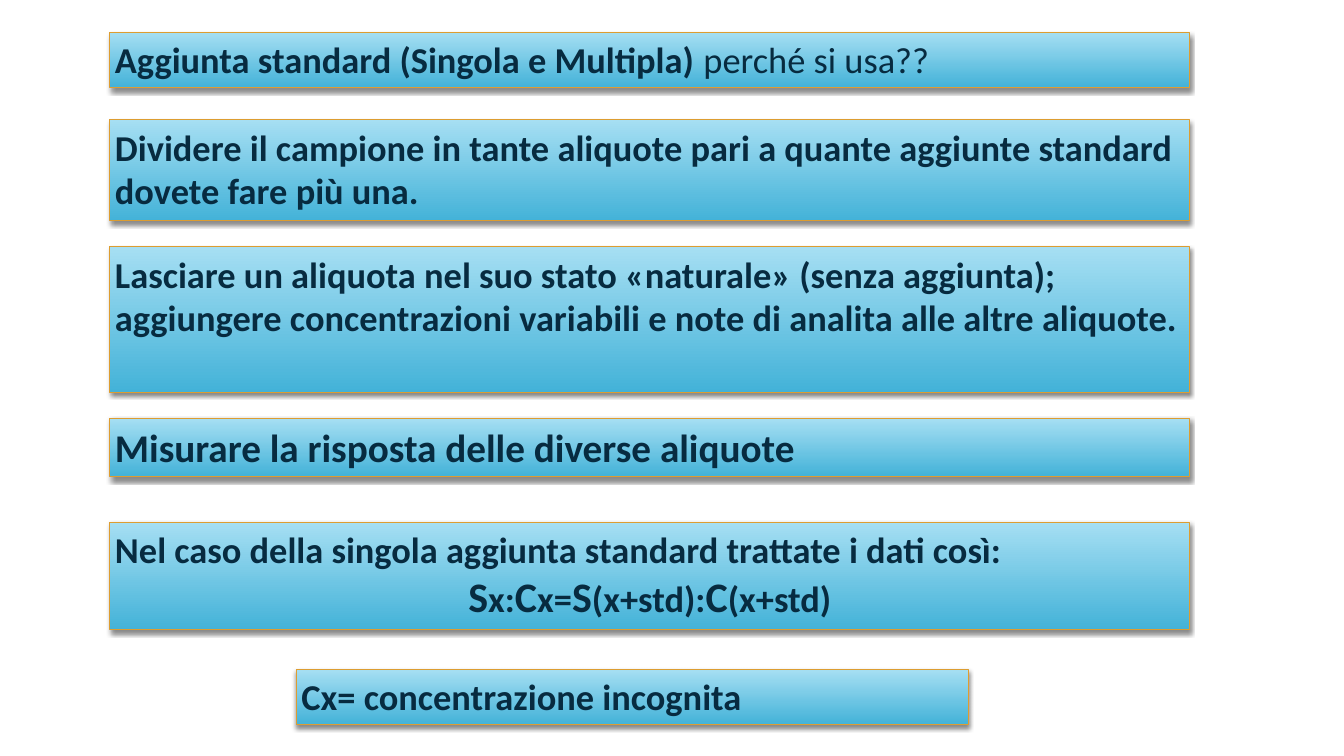
"""Build the slide on the standard addition method."""
from dataclasses import dataclass

from lxml import etree
from pptx import Presentation
from pptx import util as u
from pptx.dml.color import RGBColor
from pptx.enum import shapes, text
from pptx.oxml import ns


@dataclass(frozen=True)
class Theme:
    font: str = "Calibri"
    ink: str = "072B40"
    border: str = "DD9D31"
    gradient: tuple[str, str] = ("A6DFF3", "43B2D8")
    shadow: str = "000000"
    body: int = 26
    step: int = 28
    symbol: int = 30


THEME = Theme()


@dataclass(frozen=True)
class Run:
    words: str
    size: int = THEME.body
    bold: bool = True


@dataclass(frozen=True)
class Line:
    runs: tuple[Run, ...]
    alignment: text.PP_ALIGN = text.PP_ALIGN.LEFT


@dataclass(frozen=True)
class Box:
    top: float
    height: float
    lines: tuple[Line, ...]
    left: float = 1.09
    width: float = 10.71


FORMULA = Line(
    tuple(
        Run(words, size)
        for symbol, suffix in (("S", "x:"), ("C", "x="), ("S", "(x+std):"), ("C", "(x+std)"))
        for words, size in ((symbol, THEME.symbol), (suffix, THEME.body))
    ),
    text.PP_ALIGN.CENTER,
)

BOXES = (
    Box(0.32, 0.55, (Line((
        Run("Aggiunta standard (Singola e Multipla) "),
        Run("perché si usa??", bold=False),
    )),)),
    Box(1.19, 1, (Line((Run(
        "Dividere il campione in tante aliquote pari a quante aggiunte standard "
        "dovete fare più una."
    ),)),)),
    Box(2.45, 1.44, (Line((Run(
        "Lasciare un aliquota nel suo stato «naturale» (senza aggiunta); "
        "aggiungere concentrazioni variabili e note di analita alle altre aliquote."
    ),)),)),
    Box(4.15, 0.58, (Line((
        Run("Misurare la risposta delle diverse aliquote", THEME.step),
    )),)),
    Box(5.18, 1.07, (
        Line((Run("Nel caso della singola aggiunta standard trattate i dati così:"),)),
        FORMULA,
    )),
    Box(6.64, 0.55, (Line((Run("Cx= concentrazione incognita"),)),), left=2.94, width=6.67),
)


def apply(target: object, formats: dict[str, object]) -> None:
    """Set every format value on the target."""
    for name, value in formats.items():
        setattr(target, name, value)


def add_shadow(shape) -> None:
    """Give the shape a soft shadow straight below it."""
    shape.shadow.inherit = False
    effects = shape.element.spPr.find(ns.qn("a:effectLst"))
    outer = etree.SubElement(
        effects, ns.qn("a:outerShdw"), blurRad=str(u.Pt(3)), dist=str(u.Pt(2)),
        dir="5400000", algn="ctr", rotWithShape="0",
    )
    color = etree.SubElement(outer, ns.qn("a:srgbClr"), val=THEME.shadow)
    etree.SubElement(color, ns.qn("a:alpha"), val="45000")


def style_shape(shape) -> None:
    """Apply the gradient, border and shadow shared by all boxes."""
    shape.fill.gradient()
    shape.fill.gradient_angle = 270
    for stop, color in zip(shape.fill.gradient_stops, THEME.gradient):
        stop.color.rgb = RGBColor.from_string(color)
    shape.line.color.rgb = RGBColor.from_string(THEME.border)
    shape.line.width = u.Pt(0.75)
    add_shadow(shape)


def add_line(paragraph, line: Line) -> None:
    """Write one line of runs into the paragraph."""
    paragraph.alignment = line.alignment
    for item in line.runs:
        run = paragraph.add_run()
        run.text = item.words
        apply(run.font, {"name": THEME.font, "size": u.Pt(item.size), "bold": item.bold})
        run.font.color.rgb = RGBColor.from_string(THEME.ink)


def add_box(slide, box: Box) -> None:
    """Draw one box with its text."""
    shape = slide.shapes.add_shape(
        shapes.MSO_SHAPE.RECTANGLE,
        *map(u.Inches, (box.left, box.top, box.width, box.height)),
    )
    style_shape(shape)
    frame = shape.text_frame
    margins = {f"margin_{side}": u.Inches(0.05) for side in ("left", "top", "right", "bottom")}
    apply(frame, margins | {
        "word_wrap": True,
        "auto_size": text.MSO_AUTO_SIZE.NONE,
        "vertical_anchor": text.MSO_ANCHOR.TOP,
    })
    for index, line in enumerate(box.lines):
        add_line(frame.add_paragraph() if index else frame.paragraphs[0], line)


def main() -> None:
    """Build and save the presentation."""
    presentation = Presentation()
    apply(presentation, {"slide_width": u.Inches(13.33), "slide_height": u.Inches(7.5)})
    slide = presentation.slides.add_slide(presentation.slide_layouts[6])
    for box in BOXES:
        add_box(slide, box)
    presentation.save("out.pptx")


if __name__ == "__main__":
    main()
